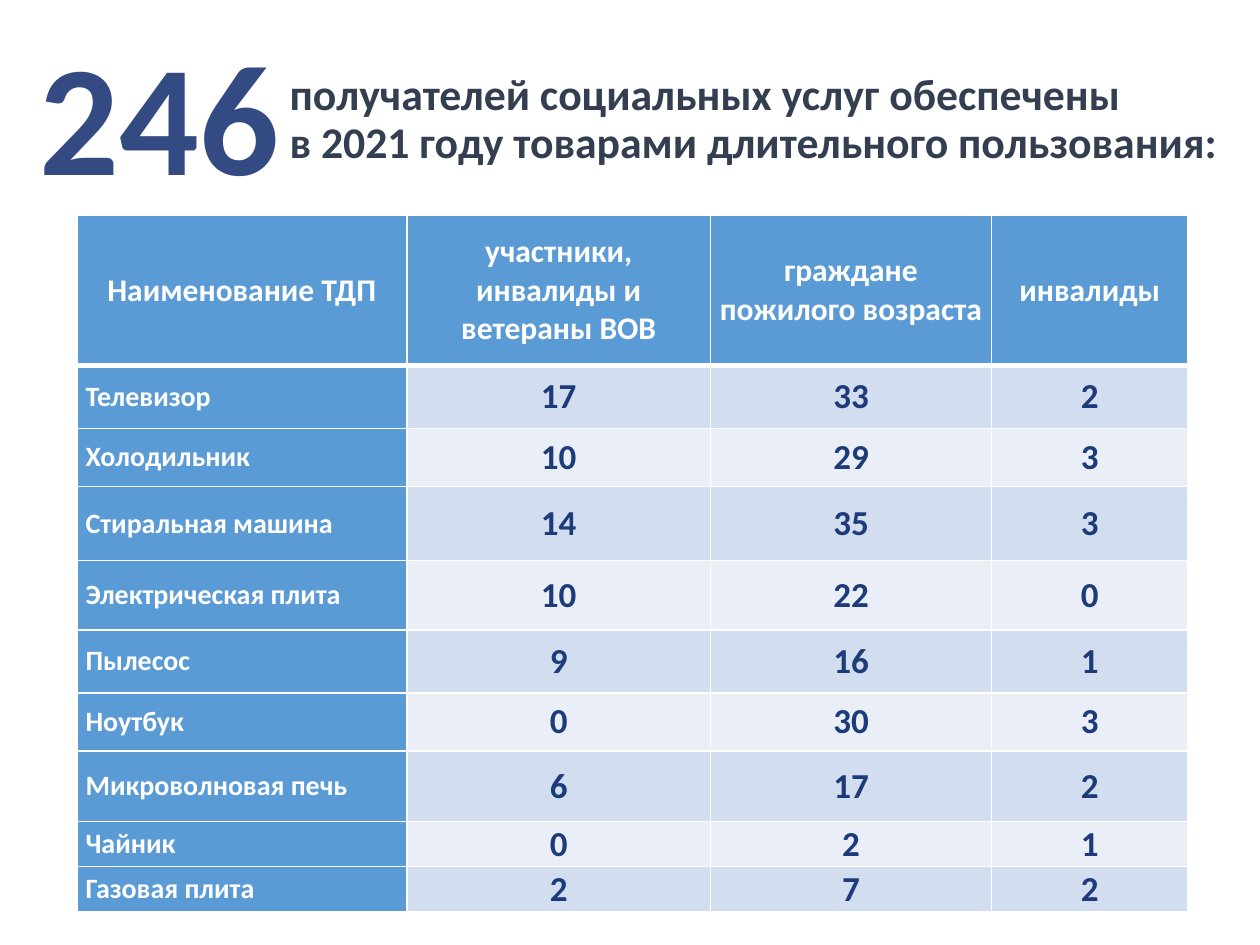
"""Build the slide on durable goods provided to social service recipients in 2021."""
from typing import NamedTuple

from lxml import etree
from pptx import Presentation
from pptx import util as u
from pptx.dml.color import RGBColor
from pptx.enum import text
from pptx.oxml import ns

FONT = "Calibri"
WHITE = RGBColor(0xFF, 0xFF, 0xFF)
BLUE = RGBColor(0x5B, 0x9B, 0xD5)
BANDS = (RGBColor(0xD2, 0xDE, 0xEF), RGBColor(0xEA, 0xEF, 0xF7))
NAVY = RGBColor(0x1D, 0x3B, 0x7B)
TOTAL_BLUE = RGBColor(0x33, 0x4A, 0x83)
SLATE = RGBColor(0x33, 0x3F, 0x50)


class Goods(NamedTuple):
    name: str
    veterans: int
    elderly: int
    disabled: int
    height: float


class Look(NamedTuple):
    size: int
    color: RGBColor
    fill: RGBColor
    align: text.PP_ALIGN


HEADINGS = ("Наименование ТДП", "участники, инвалиды и ветераны ВОВ",
            "граждане пожилого возраста", "инвалиды")
HEADING_HEIGHT = 1.19
COLUMN_WIDTHS = (2.62, 2.41, 2.23, 1.56)
GOODS = (
    Goods("Телевизор", 17, 33, 2, 0.5),
    Goods("Холодильник", 10, 29, 3, 0.46),
    Goods("Стиральная машина", 14, 35, 3, 0.59),
    Goods("Электрическая плита", 10, 22, 0, 0.55),
    Goods("Пылесос", 9, 16, 1, 0.5),
    Goods("Ноутбук", 0, 30, 3, 0.46),
    Goods("Микроволновая печь", 6, 17, 2, 0.56),
    Goods("Чайник", 0, 2, 1, 0.36),
    Goods("Газовая плита", 2, 7, 2, 0.36),
)
STATEMENT = ("получателей социальных услуг обеспечены",
             "в 2021 году товарами длительного пользования:")


def set_font(paragraph, size: int, color: RGBColor) -> None:
    font = paragraph.font
    font.name, font.size, font.bold = FONT, u.Pt(size), True
    font.color.rgb = color


def make_line(tag: str, width: float, color: RGBColor):
    line = etree.Element(ns.qn(tag), w=str(u.Pt(width)))
    fill = etree.SubElement(line, ns.qn("a:solidFill"))
    etree.SubElement(fill, ns.qn("a:srgbClr"), val=str(color))
    return line


def add_total(slide, total: str) -> None:
    title = slide.shapes.title
    title.left, title.top = u.Inches(0.05), u.Inches(0.27)
    title.width, title.height = u.Inches(2.43), u.Inches(1.44)
    frame = title.text_frame
    frame.text = total
    frame.auto_size = text.MSO_AUTO_SIZE.NONE
    frame.vertical_anchor = text.MSO_ANCHOR.MIDDLE
    paragraph = frame.paragraphs[0]
    paragraph.alignment = text.PP_ALIGN.CENTER
    paragraph.line_spacing = 0.9
    set_font(paragraph, 90, TOTAL_BLUE)
    run_properties = paragraph.runs[0].font._element
    run_properties.insert(0, make_line("a:ln", 4, TOTAL_BLUE))


def add_statement(slide) -> None:
    frame = slide.shapes.add_textbox(
        u.Inches(2.2), u.Inches(0.62), u.Inches(7.8), u.Inches(0.86)).text_frame
    frame.word_wrap = True
    for index, line in enumerate(STATEMENT):
        paragraph = frame.add_paragraph() if index else frame.paragraphs[0]
        paragraph.text = line
        paragraph.line_spacing = u.Pt(20)
        if index:
            paragraph.space_before = u.Pt(7.5)
        set_font(paragraph, 25, SLATE)


def choose_look(row: int, column: int) -> Look:
    if row == 0:
        return Look(18, WHITE, BLUE, text.PP_ALIGN.CENTER)
    if column == 0:
        return Look(16, WHITE, BLUE, text.PP_ALIGN.LEFT)
    return Look(20, NAVY, BANDS[(row - 1) % 2], text.PP_ALIGN.CENTER)


def fill_cell(cell, content: str, row: int, look: Look) -> None:
    cell.text = content
    cell.vertical_anchor = text.MSO_ANCHOR.MIDDLE
    cell.margin_left = cell.margin_right = u.Inches(0.07)
    cell.margin_top = cell.margin_bottom = 0
    paragraph = cell.text_frame.paragraphs[0]
    paragraph.alignment = look.align
    set_font(paragraph, look.size, look.color)
    widths = {"L": 1, "R": 1, "T": 3 if row == 1 else 1, "B": 3 if row == 0 else 1}
    properties = cell._tc.get_or_add_tcPr()
    for side, width in widths.items():
        properties.append(make_line(f"a:ln{side}", width, WHITE))
    cell.fill.solid()
    cell.fill.fore_color.rgb = look.fill


def add_goods_table(slide) -> None:
    heights = [HEADING_HEIGHT, *(goods.height for goods in GOODS)]
    rows = [HEADINGS, *(goods[:-1] for goods in GOODS)]
    table = slide.shapes.add_table(
        len(rows), len(HEADINGS), u.Inches(0.61), u.Inches(1.71),
        u.Inches(sum(COLUMN_WIDTHS)), u.Inches(sum(heights))).table
    table.first_col = True
    for column, width in zip(table.columns, COLUMN_WIDTHS):
        column.width = u.Inches(width)
    for row, (values, height) in enumerate(zip(rows, heights)):
        table.rows[row].height = u.Inches(height)
        for column, value in enumerate(values):
            fill_cell(table.cell(row, column), str(value), row, choose_look(row, column))


def main() -> None:
    deck = Presentation()
    deck.slide_width, deck.slide_height = u.Inches(10), u.Inches(7.5)
    slide = deck.slides.add_slide(deck.slide_layouts[5])
    add_goods_table(slide)
    add_total(slide, "246")
    add_statement(slide)
    deck.save("out.pptx")


if __name__ == "__main__":
    main()
